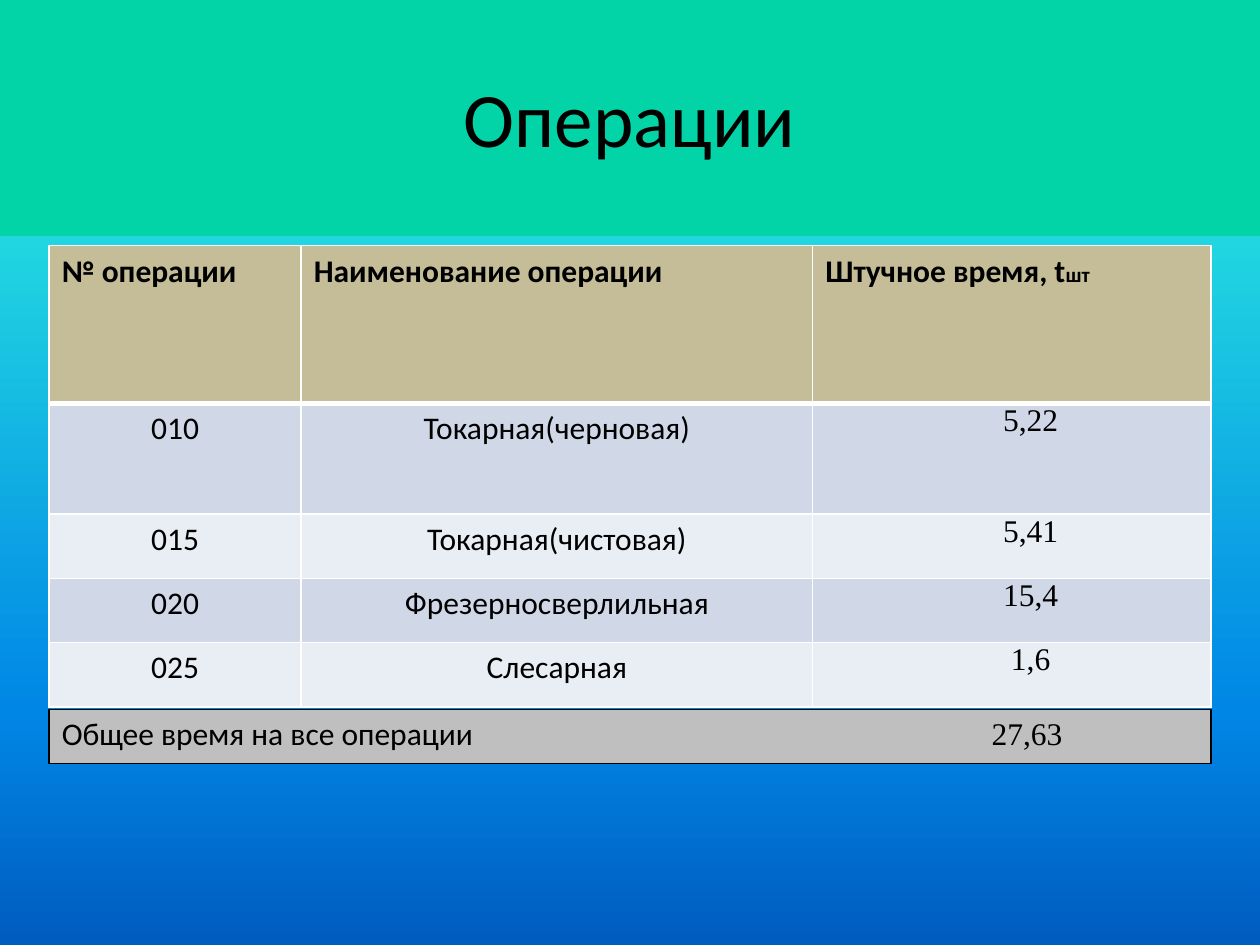
from dataclasses import dataclass
from lxml.etree import SubElement as Sub
from pptx import Presentation
from pptx.dml.color import RGBColor as Rgb
from pptx.enum.text import MSO_ANCHOR as Anchor, PP_ALIGN as Align
from pptx.oxml.ns import qn
from pptx.util import Inches, Pt


@dataclass(frozen=True)
class Theme:
    sans: str = "Calibri"
    serif: str = "Times New Roman"
    title: int = 44
    body: int = 18
    small: int = 12
    ink: str = "000000"
    line: str = "FFFFFF"
    head: str = "C4BD97"
    bands: tuple = ("D0D8E8", "E9EDF4")
    total: str = "BFBFBF"
    sky: tuple = ((25, "03D4A8"), (25, "21D6E0"), (75, "0087E6"), (100, "005CBF"))


class Deck:
    """Holds the theme and the current slide, and draws each kind of element."""

    def __init__(self, theme):
        self.theme = theme
        self.show = Presentation()
        self.show.slide_width, self.show.slide_height = Inches(10), Inches(7.5)
        self.slide = self.show.slides.add_slide(self.show.slide_layouts[6])

    def sky(self):
        fill = self.slide.background.fill
        fill.gradient()
        fill.gradient_angle = 270
        stops = self.slide.element.find(".//" + qn("a:gsLst"))
        stops[:] = []
        for pos, tint in self.theme.sky:
            stop = Sub(stops, qn("a:gs"), pos=str(pos * 1000))
            Sub(stop, qn("a:srgbClr"), val=tint)

    def style(self, para, size, face=None, bold=False, align=Align.LEFT):
        para.alignment = align
        font = para.font
        font.name, font.size, font.bold = face or self.theme.sans, Pt(size), bold
        font.color.rgb = Rgb.from_string(self.theme.ink)

    def title(self, text, left, top, width, height):
        box = self.slide.shapes.add_textbox(*map(Inches, (left, top, width, height)))
        frame = box.text_frame
        frame.word_wrap = True
        frame.vertical_anchor = Anchor.MIDDLE
        para = frame.paragraphs[0]
        para.add_run().text = text
        self.style(para, self.theme.title, align=Align.CENTER)

    def table(self, left, top, cols, rows):
        size = (left, top, sum(cols), sum(rows))
        grid = self.slide.shapes.add_table(len(rows), len(cols), *map(Inches, size)).table
        grid.first_row = grid.horz_banding = False
        for col, width in zip(grid.columns, cols):
            col.width = Inches(width)
        for row, height in zip(grid.rows, rows):
            row.height = Inches(height)
        return grid

    def cell(self, cell, text, fill, line, top=1, base=1, **style):
        props = cell._tc.get_or_add_tcPr()
        for side, width in zip("LRTB", (1, 1, top, base)):
            edge = Sub(props, qn("a:ln" + side), w=str(Pt(width)))
            Sub(Sub(edge, qn("a:solidFill")), qn("a:srgbClr"), val=line)
        cell.fill.solid()
        cell.fill.fore_color.rgb = Rgb.from_string(fill)
        para = cell.text_frame.paragraphs[0]
        para.add_run().text = text
        self.style(para, self.theme.body, **style)
        return para

    def time(self, cell, para):
        cell.margin_left = cell.margin_right = Inches(0.07)
        cell.margin_top = cell.margin_bottom = 0
        para._p.get_or_add_pPr().set("indent", str(Inches(0.3)))

    def steps(self, left, top, cols, rows, heads, data):
        look = self.theme
        grid = self.table(left, top, cols, rows)
        for col, text in enumerate(heads):
            para = self.cell(grid.cell(0, col), text, look.head, look.line, base=3, bold=True)
        mark = para.add_run()
        mark.text = "шт"
        mark.font.size = Pt(look.small)
        for row, texts in enumerate(data, 1):
            for col, text in enumerate(texts):
                cell, last = grid.cell(row, col), col == len(cols) - 1
                para = self.cell(cell, text, look.bands[(row - 1) % 2], look.line,
                                 top=3 if row == 1 else 1, align=Align.CENTER,
                                 face=look.serif if last else look.sans)
                if last:
                    self.time(cell, para)

    def total(self, left, top, width, height, text, value, stop):
        look = self.theme
        cell = self.table(left, top, [width], [height]).cell(0, 0)
        para = self.cell(cell, text, look.total, look.ink)
        run = para.add_run()
        run.text = "\t" + value
        run.font.name = look.serif
        props = para._p.get_or_add_pPr()
        tabs = Sub(props, qn("a:tabLst"))
        Sub(tabs, qn("a:tab"), pos=str(Inches(stop)), algn="l")
        props.insert(0, tabs)


def main():
    deck = Deck(Theme())
    deck.sky()
    deck.title("Операции", 0.5, 0.3, 9, 1.25)
    cols = [2, 4.06, 3.16]
    heads = ["№ операции", "Наименование операции", "Штучное время, t"]
    data = [
        ("010", "Токарная(черновая)", "5,22"),
        ("015", "Токарная(чистовая)", "5,41"),
        ("020", "Фрезерносверлильная", "15,4"),
        ("025", "Слесарная", "1,6"),
    ]
    deck.steps(0.39, 1.95, cols, [1.25, 0.88] + [0.51] * 3, heads, data)
    deck.total(0.39, 5.63, sum(cols), 0.43, "Общее время на все операции", "27,63", 7.38)
    deck.show.save("out.pptx")


if __name__ == "__main__":
    main()
